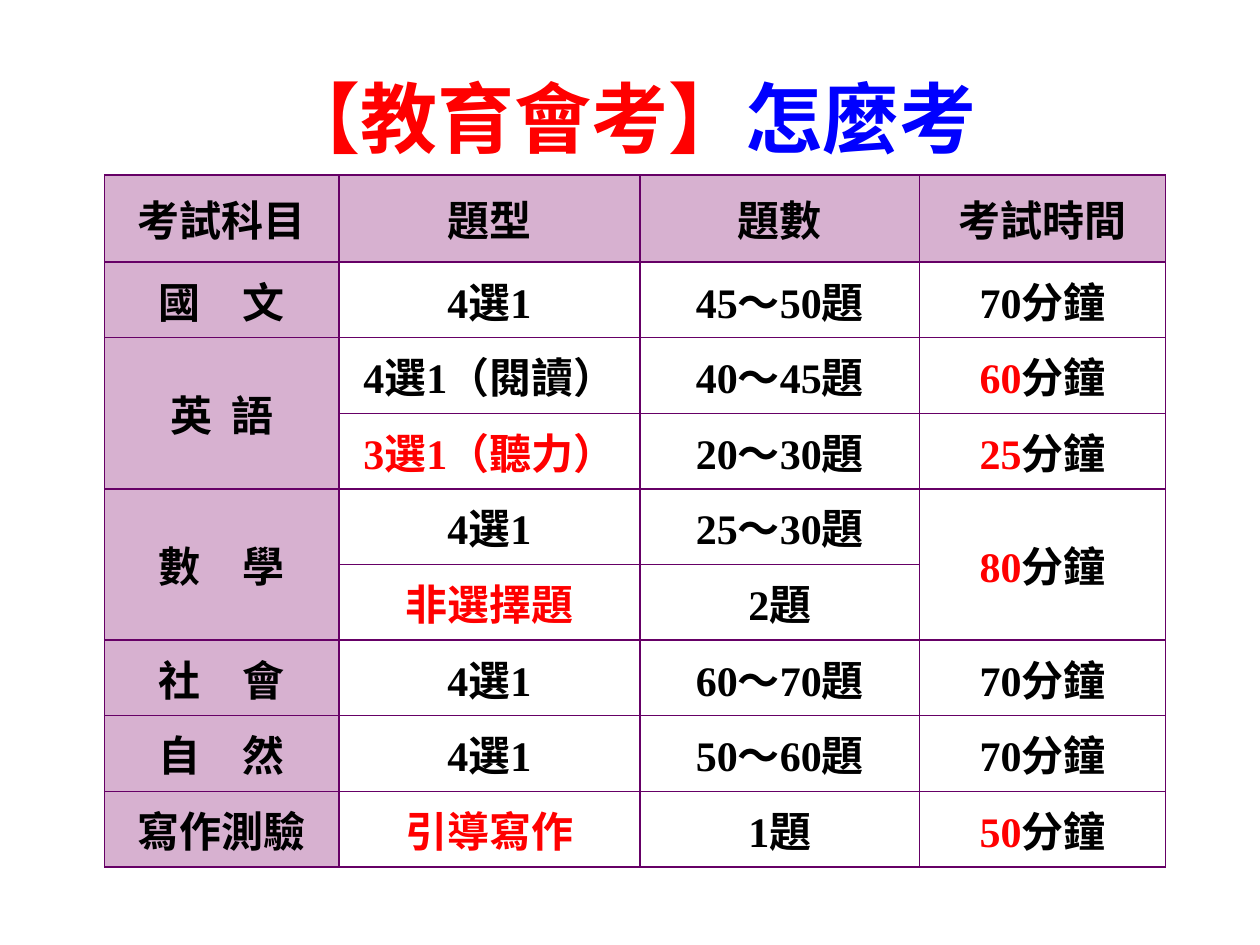
from dataclasses import dataclass

from lxml import etree
from pptx import Presentation
from pptx.dml.color import RGBColor
from pptx.enum.text import MSO_ANCHOR, PP_ALIGN
from pptx.oxml.ns import qn
from pptx.util import Inches, Pt

MIDDLE = MSO_ANCHOR.MIDDLE
CENTER = PP_ALIGN.CENTER


@dataclass(frozen=True)
class Theme:
    red: str = "FF0000"
    blue: str = "0000FF"
    black: str = "000000"
    heading_fill: str = "D7B1D0"
    border: str = "660066"
    title_size: int = 44
    table_size: int = 24
    border_width: int = 1
    latin_font: str = "Times New Roman"
    chinese_font: str = "Noto Sans CJK SC"


theme = Theme()


def add_run(paragraph, text, size, color, font_name):
    run = paragraph.add_run()
    run.text = text
    run.font.size = Pt(size)
    run.font.bold = True
    run.font.color.rgb = RGBColor.from_string(color)
    run.font.name = font_name
    east_asian = etree.SubElement(run.font._element, qn("a:ea"))
    east_asian.set("typeface", theme.chinese_font)


def add_borders(cell):
    properties = cell._tc.get_or_add_tcPr()
    for side in ("lnL", "lnR", "lnT", "lnB"):
        line = etree.SubElement(properties, qn(f"a:{side}"), w=str(Pt(theme.border_width)))
        solid_fill = etree.SubElement(line, qn("a:solidFill"))
        etree.SubElement(solid_fill, qn("a:srgbClr"), val=theme.border)


presentation = Presentation()
presentation.slide_width = Inches(10)
presentation.slide_height = Inches(7.5)
slide = presentation.slides.add_slide(presentation.slide_layouts[6])

# Title
title = slide.shapes.add_textbox(Inches(0.5), Inches(0.3), Inches(9), Inches(1.25))
title.text_frame.word_wrap = True
title.text_frame.vertical_anchor = MIDDLE
paragraph = title.text_frame.paragraphs[0]
paragraph.alignment = CENTER
for text, color in (("【教育會考】", theme.red), ("怎麼考", theme.blue)):
    add_run(paragraph, text, theme.title_size, color, theme.chinese_font)

# Table content: each cell is a (red text, black text) pair or plain black text
exam_rows = [
    ["考試科目", "題型", "題數", "考試時間"],
    ["國　文", "4選1", "45～50題", "70分鐘"],
    ["英  語", "4選1（閱讀）", "40～45題", ("60", "分鐘")],
    ["", ("3選1（聽力）", ""), "20～30題", ("25", "分鐘")],
    ["數　學", "4選1", "25～30題", ("80", "分鐘")],
    ["", ("非選擇題", ""), "2題", ""],
    ["社　會", "4選1", "60～70題", "70分鐘"],
    ["自　然", "4選1", "50～60題", "70分鐘"],
    ["寫作測驗", ("引導寫作", ""), "1題", ("50", "分鐘")],
]
column_widths = [1.86, 2.39, 2.22, 1.95]
row_heights = [0.69] + [0.6] * (len(exam_rows) - 1)

# Table grid
table = slide.shapes.add_table(
    len(row_heights), len(column_widths), Inches(0.83), Inches(1.39),
    Inches(sum(column_widths)), Inches(sum(row_heights)),
).table
table.first_row = False
table.horz_banding = False
for column, width in zip(table.columns, column_widths):
    column.width = Inches(width)
for row, height in zip(table.rows, row_heights):
    row.height = Inches(height)

# Cells that cover two rows
for row_index, column_index in ((2, 0), (4, 0), (4, 3)):
    table.cell(row_index, column_index).merge(table.cell(row_index + 1, column_index))

# Cell text, borders and fills
for row_index, contents in enumerate(exam_rows):
    for column_index, content in enumerate(contents):
        cell = table.cell(row_index, column_index)
        cell.vertical_anchor = MIDDLE
        cell.margin_left = cell.margin_right = Inches(0.02)
        cell.margin_top = cell.margin_bottom = Inches(0.02)
        add_borders(cell)
        if row_index == 0 or column_index == 0:
            cell.fill.solid()
            cell.fill.fore_color.rgb = RGBColor.from_string(theme.heading_fill)
        else:
            cell.fill.background()

        paragraph = cell.text_frame.paragraphs[0]
        paragraph.alignment = CENTER
        red_text, black_text = content if isinstance(content, tuple) else ("", content)
        for text, color in ((red_text, theme.red), (black_text, theme.black)):
            if text:
                add_run(paragraph, text, theme.table_size, color, theme.latin_font)

presentation.save("out.pptx")
